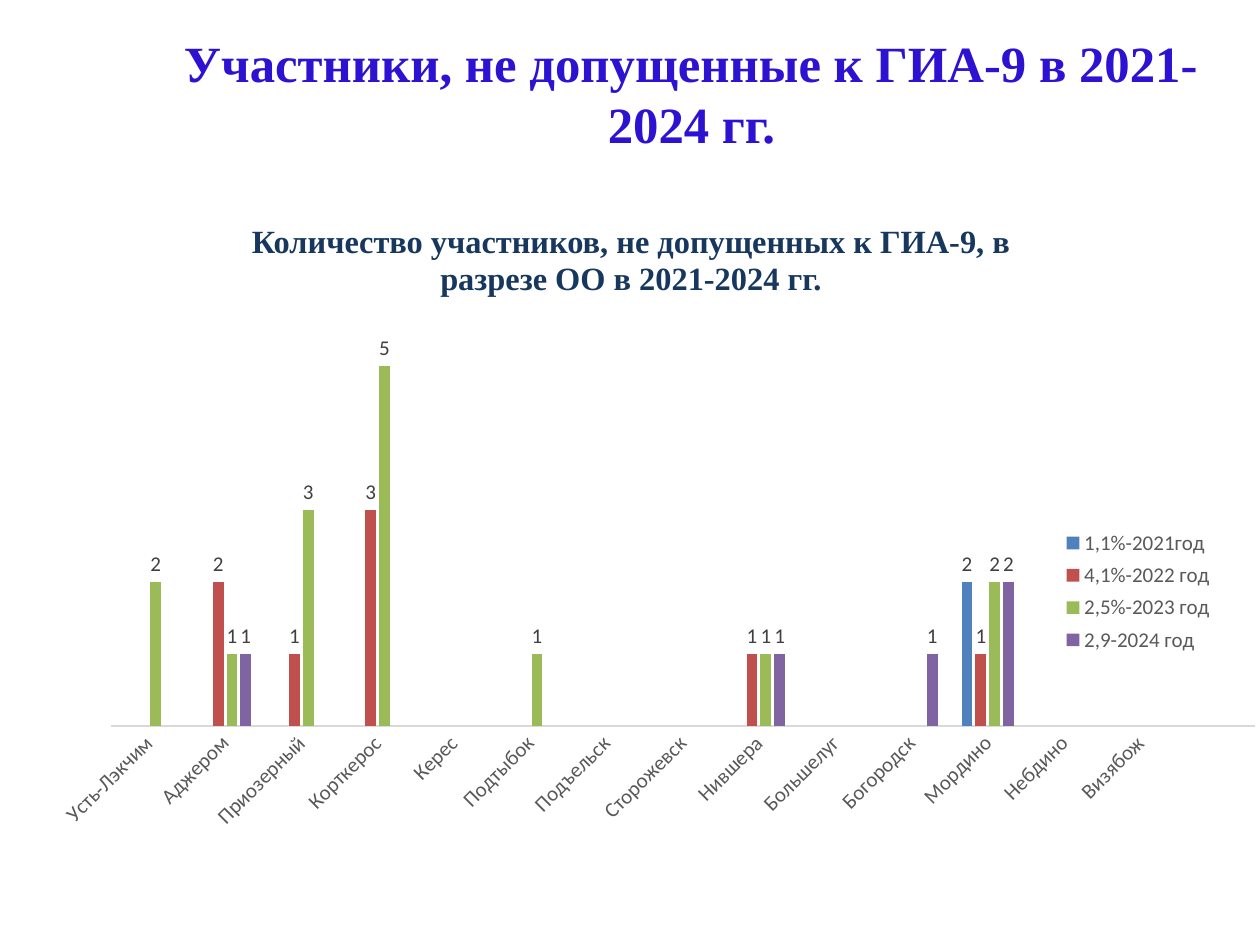
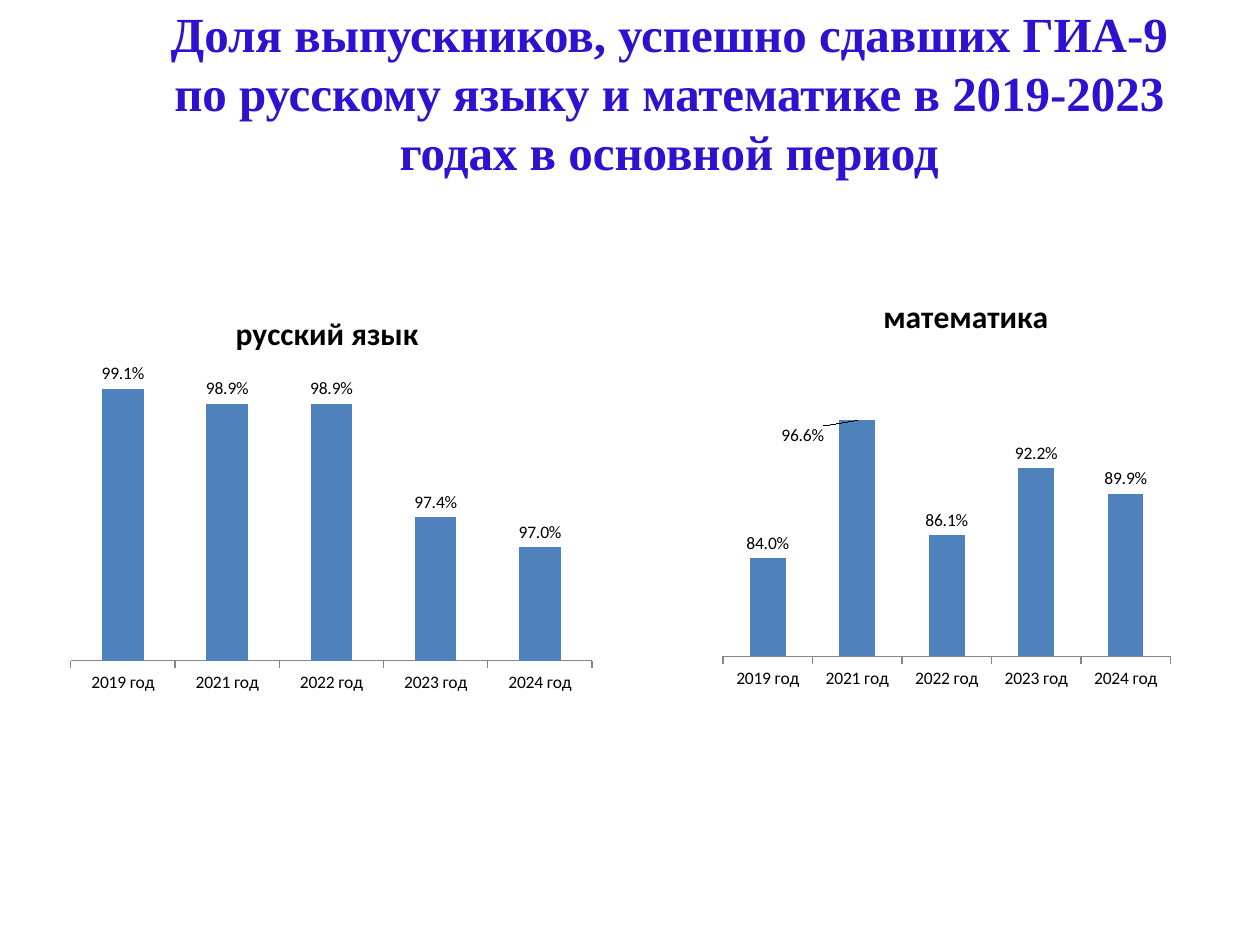
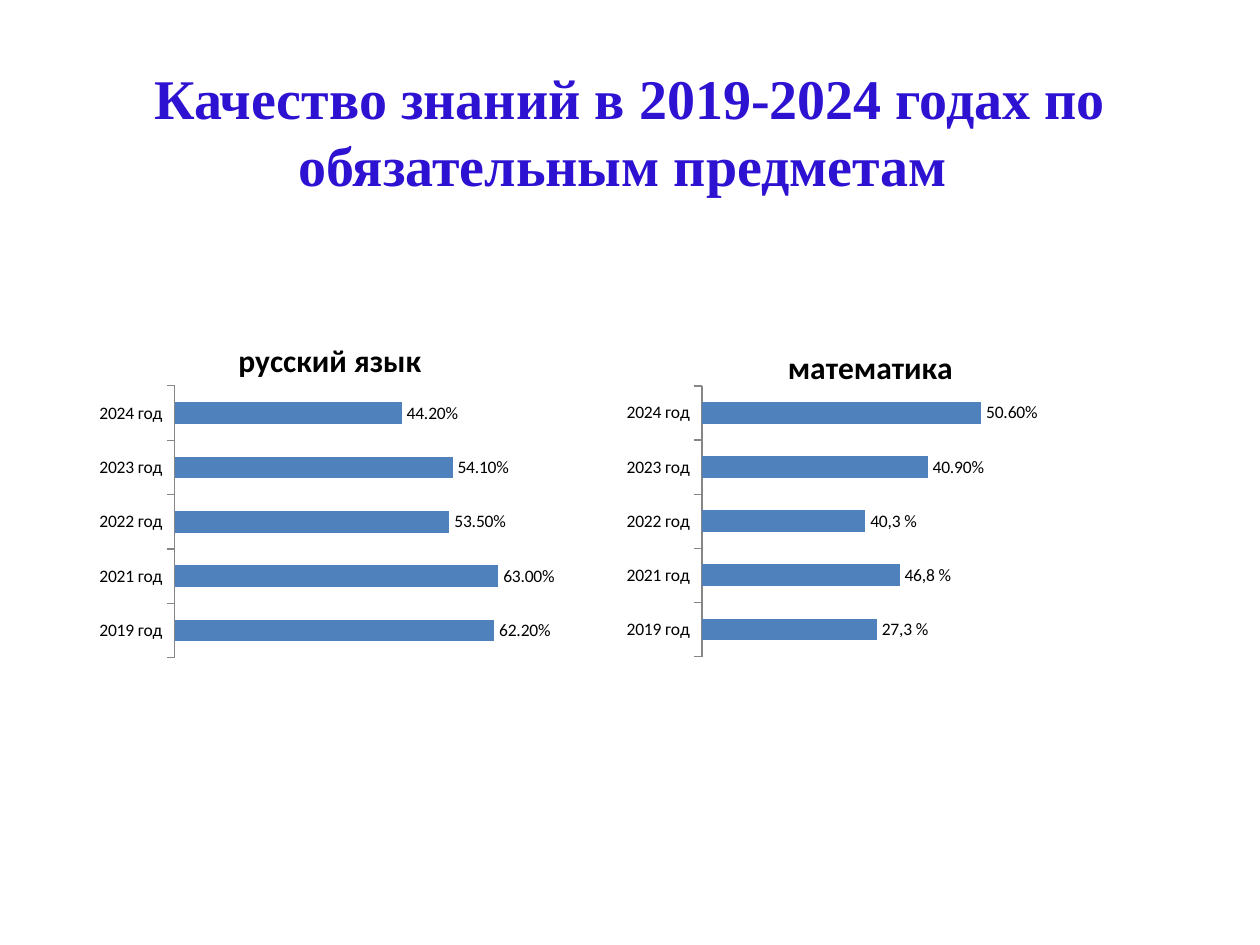
import pptx
import pptx.chart.data
import pptx.dml.color
import pptx.enum.chart
import pptx.enum.text
import pptx.oxml
import pptx.oxml.ns
import pptx.util

Cm, Pt = pptx.util.Cm, pptx.util.Pt
XL = pptx.enum.chart
TITLE_COLOR, SUBTITLE_COLOR = "2D12D2", "17375E"
BLUE, RED, GREEN, PURPLE = "4F81BD", "C0504D", "9BBB59", "8064A2"
SERIF, SANS = "Times New Roman", "Calibri"
YEARS = ["2019 год", "2021 год", "2022 год", "2023 год", "2024 год"]
SCHOOLS = ["Усть-Лэкчим", "Аджером", "Приозерный", "Корткерос", "Керес",
           "Подтыбок", "Подъельск", "Сторожевск", "Нившера", "Большелуг",
           "Богородск", "Мордино", "Небдино", "Визябож", ""]
NOT_ADMITTED = [
    ("1,1%-2021год", BLUE, {"Мордино": 2}),
    ("4,1%-2022 год", RED, {"Аджером": 2, "Приозерный": 1, "Корткерос": 3,
                            "Нившера": 1, "Мордино": 1}),
    ("2,5%-2023 год", GREEN, {"Усть-Лэкчим": 2, "Аджером": 1, "Приозерный": 3,
                              "Корткерос": 5, "Подтыбок": 1, "Нившера": 1,
                              "Мордино": 2}),
    ("2,9-2024 год", PURPLE, {"Аджером": 1, "Нившера": 1, "Богородск": 1,
                              "Мордино": 2}),
]


def color(hex_code):
    """Turn a hex string into a colour."""
    return pptx.dml.color.RGBColor.from_string(hex_code)


def style(font, size, hex_code, name=SANS, bold=False):
    """Format a font."""
    font.size, font.name, font.bold = Pt(size), name, bold
    font.color.rgb = color(hex_code)


def write_heading(shape, box, text, size, hex_code, top_inset=0, spacing=None):
    """Place a shape and write one centred bold serif paragraph in it."""
    shape.left, shape.top, shape.width, shape.height = map(Cm, box)
    frame = shape.text_frame
    frame.word_wrap = True
    frame.auto_size = pptx.enum.text.MSO_AUTO_SIZE.NONE
    frame.vertical_anchor = pptx.enum.text.MSO_ANCHOR.TOP
    frame.margin_left = frame.margin_right = frame.margin_bottom = 0
    frame.margin_top = Cm(top_inset)
    paragraph = frame.paragraphs[0]
    paragraph.alignment = pptx.enum.text.PP_ALIGN.CENTER
    paragraph.line_spacing = spacing
    run = paragraph.add_run()
    run.text = text
    style(run.font, size, hex_code, SERIF, True)


def add_titled_slide(deck, box, text, size, top_inset=0):
    """Add a title-only slide with the shared title style."""
    slide = deck.slides.add_slide(deck.slide_layouts[5])
    write_heading(slide.shapes.title, box, text, size, TITLE_COLOR, top_inset)
    return slide


def set_layout(parent, index, x, y, size=None, inner=False):
    """Give a chart part a manual layout as fractions of the chart."""
    for old in parent.findall(pptx.oxml.ns.qn("c:layout")):
        parent.remove(old)
    items = [("layoutTarget", "inner")] if inner else []
    if size:
        items += [("xMode", "edge"), ("yMode", "edge")]
    items += [("x", x), ("y", y)]
    if size:
        items += [("w", size[0]), ("h", size[1])]
    body = "".join(f'<c:{tag} val="{value}"/>' for tag, value in items)
    parent.insert(index, pptx.oxml.parse_xml(
        f'<c:layout {pptx.oxml.ns.nsdecls("c")}>'
        f'<c:manualLayout>{body}</c:manualLayout></c:layout>'))


def add_bars(slide, box, kind, categories, series, plot_box, limits,
             number_format="General", gap=150, overlap=0,
             label_size=10, label_color="000000"):
    """Add a bar chart with value labels and a hidden value axis."""
    data = pptx.chart.data.CategoryChartData(number_format=number_format)
    data.categories = categories
    for name, _, values in series:
        data.add_series(name, values)
    chart = slide.shapes.add_chart(kind, *map(Cm, box), data).chart
    style(chart.font, 10, "000000")
    chart.has_title = chart.has_legend = False
    plot = chart.plots[0]
    plot.gap_width, plot.overlap = gap, overlap
    plot.vary_by_categories = False
    for bars, (_, fill, _) in zip(plot.series, series):
        bars.format.fill.solid()
        bars.format.fill.fore_color.rgb = color(fill)
        bars.invert_if_negative = False
        labels = bars.data_labels
        labels.show_value = True
        labels.position = XL.XL_LABEL_POSITION.OUTSIDE_END
        labels.number_format = number_format
        labels.number_format_is_linked = False
        style(labels.font, label_size, label_color)
    scale = chart.value_axis
    scale.visible = scale.has_major_gridlines = False
    scale.minimum_scale, scale.maximum_scale = limits
    axis = chart.category_axis
    axis.format.line.color.rgb = color("868686")
    axis.format.line.width = Pt(0.75)
    x, y, width, height = plot_box
    area = chart.element.find(".//" + pptx.oxml.ns.qn("c:plotArea"))
    set_layout(area, 0, x, y, (width, height), inner=True)
    return chart


def add_school_chart(slide, box):
    """Chart the pupils not admitted, by school and year."""
    series = [(name, fill, [counts.get(school) for school in SCHOOLS])
              for name, fill, counts in NOT_ADMITTED]
    chart = add_bars(slide, box, XL.XL_CHART_TYPE.COLUMN_CLUSTERED, SCHOOLS,
                     series, (0.103, 0, 0.893, 0.791), (0, 6), gap=219,
                     overlap=-27, label_size=12, label_color="404040")
    axis = chart.category_axis
    axis.major_tick_mark = XL.XL_TICK_MARK.NONE
    axis.format.line.color.rgb = color("D9D9D9")
    style(axis.tick_labels.font, 12, "595959")
    names = chart.element.xpath(".//c:catAx/c:txPr/a:bodyPr")[0]
    names.set("rot", "-2700000")
    names.set("vert", "horz")
    chart.has_legend = True
    legend = chart.legend
    legend.position = XL.XL_LEGEND_POSITION.RIGHT
    legend.include_in_layout = True
    style(legend.font, 12, "595959")
    set_layout(chart.element.find(".//" + pptx.oxml.ns.qn("c:legend")), 1,
               0.84, 0.42, (0.13, 0.25))


def add_subject_chart(slide, box, kind, subject, shares, plot_box, limits,
                      number_format):
    """Chart one subject's yearly shares under its name."""
    chart = add_bars(slide, box, kind, YEARS, [(subject, BLUE, shares)],
                     plot_box, limits, number_format)
    chart.category_axis.major_tick_mark = XL.XL_TICK_MARK.OUTSIDE
    chart.has_title = True
    run = chart.chart_title.text_frame.paragraphs[0].add_run()
    run.text = subject
    style(run.font, 18, "000000", bold=True)
    return chart


def build_not_admitted(deck):
    """Build the slide on pupils not admitted to the exam."""
    slide = add_titled_slide(
        deck, (3.63, -0.33, 20.62, 3.43),
        "Участники, не допущенные к ГИА-9 в 2021- 2024 гг.", 29, 0.98)
    write_heading(
        slide.shapes.add_textbox(0, 0, 0, 0), (4.98, 4.32, 15.47, 1.6),
        "Количество участников, не допущенных к ГИА-9, в разрезе ОО в 2021-2024 гг.",
        18.5, SUBTITLE_COLOR, 0.16, Pt(21.4))
    add_school_chart(slide, (-0.43, 5.92, 25.83, 11.02))


def build_pass_rates(deck):
    """Build the slide on pass rates."""
    slide = add_titled_slide(
        deck, (3.18, 0.08, 20.62, 3.58),
        "Доля выпускников, успешно сдавших ГИА-9 по русскому языку "
        "и математике в 2019-2023 годах в основной период", 28)
    columns = XL.XL_CHART_TYPE.COLUMN_CLUSTERED
    add_subject_chart(
        slide, (0.84, 5.87, 11.51, 8.31), columns, "русский язык",
        (0.991, 0.989, 0.989, 0.974, 0.97), (0.051, 0.163, 0.913, 0.734),
        (0.955, 0.995), "0.0%")
    maths = add_subject_chart(
        slide, (13.97, 5.51, 11, 8.69), columns, "математика",
        (0.84, 0.966, 0.861, 0.922, 0.899), (0.055, 0.255, 0.82, 0.634),
        (0.75, 1), "0.0%")
    label_2021 = maths.plots[0].series[0].points[1].data_label
    label_2021.position = XL.XL_LABEL_POSITION.OUTSIDE_END
    style(label_2021.font, 10, "000000")
    set_layout(maths.element.find(".//" + pptx.oxml.ns.qn("c:dLbl")), 1,
               -0.1, 0.07)


def build_quality(deck):
    """Build the slide on quality of knowledge."""
    slide = add_titled_slide(
        deck, (2.39, 1.27, 20.62, 2.74),
        "Качество знаний в 2019-2024 годах по обязательным предметам ", 32)
    bars = XL.XL_CHART_TYPE.BAR_CLUSTERED
    add_subject_chart(
        slide, (1.47, 6.43, 10.36, 7.34), bars, "русский язык",
        (0.622, 0.63, 0.535, 0.541, 0.442), (0.198, 0.184, 0.7, 0.747),
        (0, 0.7), "0.00%")
    maths = add_subject_chart(
        slide, (12.07, 6.58, 10.95, 7.19), bars, "математика",
        (0.317, 0.358, 0.296, 0.409, 0.506), (0.19, 0.167, 0.61, 0.759),
        (0, 0.6), "0.00%")
    points = maths.plots[0].series[0].points
    for index, share in enumerate(("27,3 %", "46,8 %", "40,3 %")):
        label = points[index].data_label
        run = label.text_frame.paragraphs[0].add_run()
        run.text = share
        style(run.font, 10, "000000")
        label.position = XL.XL_LABEL_POSITION.OUTSIDE_END


def main():
    """Build and save the deck."""
    deck = pptx.Presentation()
    deck.slide_width, deck.slide_height = Cm(25.4), Cm(19.05)
    build_not_admitted(deck)
    build_pass_rates(deck)
    build_quality(deck)
    deck.save("out.pptx")


if __name__ == "__main__":
    main()
